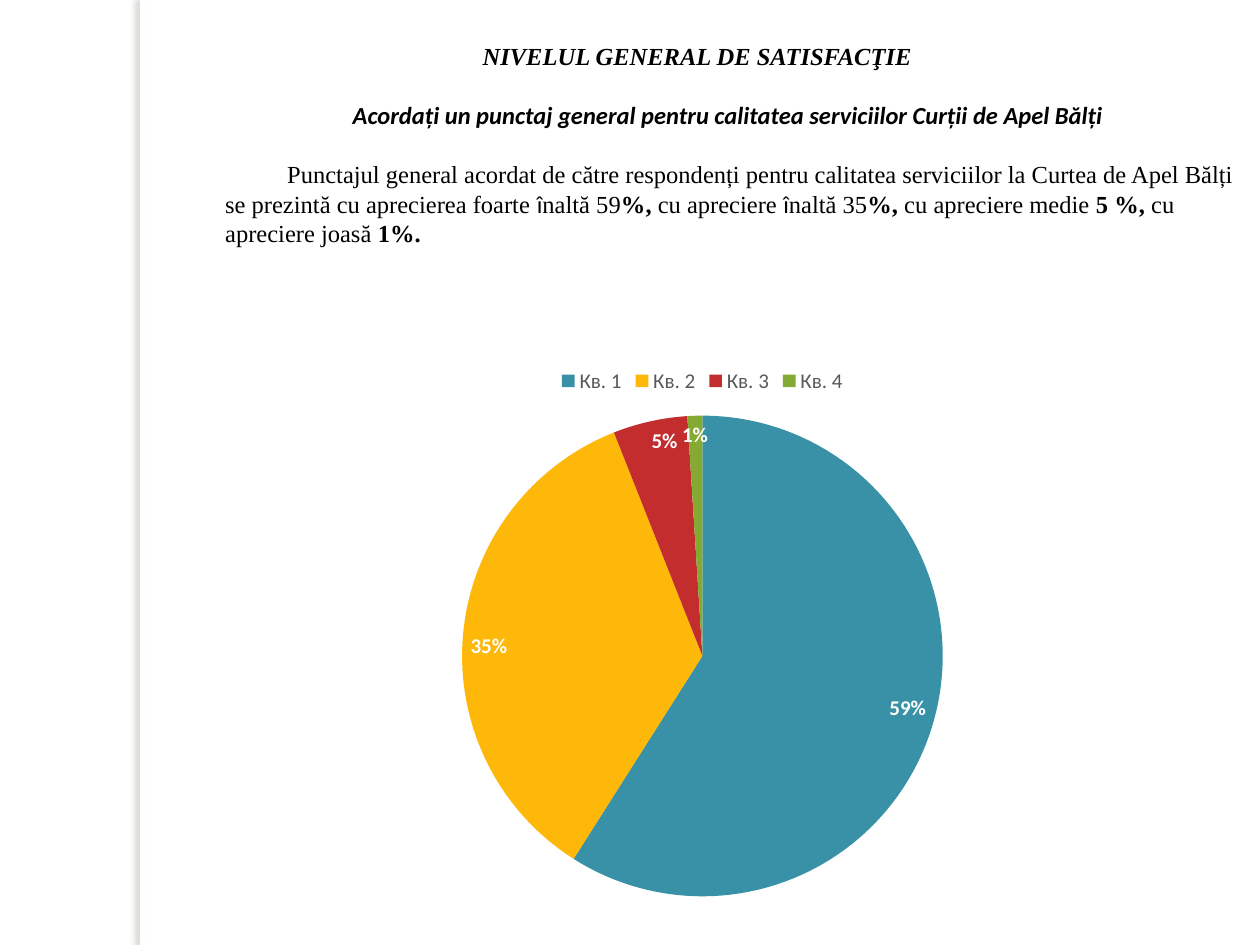
from lxml import etree
from pptx import Presentation
from pptx import util as u
from pptx.chart.data import CategoryChartData
from pptx.dml.color import RGBColor
from pptx.enum import chart as charts, shapes, text
from pptx.oxml.ns import qn

COLOURS = {
    "white": "FFFFFF", "black": "000000", "grey": "595959", "shadow": "736F63",
    "teal": "3891A7", "yellow": "FEB80A", "red": "C32D2E", "green": "84AA33",
}
SERIF, SANS = "Times New Roman", "Calibri"


class SlideBuilder:
    def __init__(self, slide):
        self.slide = slide

    @staticmethod
    def colour(name):
        return RGBColor.from_string(COLOURS[name])

    def style(self, font, face, size, colour="black", bold=False, italic=False):
        font.name, font.size = face, u.Pt(size)
        font.bold, font.italic = bold, italic
        font.color.rgb = self.colour(colour)

    def side_strip(self, left, top, width, height):
        """Add a plain white strip that casts a soft shadow to its left."""
        strip = self.slide.shapes.add_shape(
            shapes.MSO_SHAPE.RECTANGLE, left, top, width, height)
        strip.fill.solid()
        strip.fill.fore_color.rgb = self.colour("white")
        strip.line.fill.background()
        strip.shadow.inherit = False
        effects = strip.element.spPr.find(qn("a:effectLst"))
        shadow = etree.SubElement(
            effects, qn("a:outerShdw"), blurRad=str(u.Pt(3)),
            dist=str(u.Pt(3)), dir="10800000", algn="tl", rotWithShape="0")
        tint = etree.SubElement(shadow, qn("a:srgbClr"), val=COLOURS["shadow"])
        etree.SubElement(tint, qn("a:alpha"), val="25000")

    def text_box(self, left, top, width, height):
        box = self.slide.shapes.add_textbox(left, top, width, height)
        box.text_frame.word_wrap = True
        box.text_frame.vertical_anchor = text.MSO_ANCHOR.TOP
        return box.text_frame

    def paragraph(self, para, spans, indent, size=14, italic=False, gap=0):
        """Fill a paragraph with (words, face, bold) spans."""
        para.space_before = u.Pt(gap)
        para._p.get_or_add_pPr().set("indent", str(indent))
        for words, face, bold in spans:
            span = para.add_run()
            span.text = words
            self.style(span.font, face, size, bold=bold, italic=italic)

    def pie(self, left, top, width, height, slices):
        """Add a pie from (category, value, colour) slices."""
        data = CategoryChartData()
        data.categories = [name for name, _, _ in slices]
        data.add_series("Series 1", [value for _, value, _ in slices])
        chart = self.slide.shapes.add_chart(
            charts.XL_CHART_TYPE.PIE, left, top, width, height, data).chart
        self.style(chart.font, SANS, 10)
        chart.has_title = False
        chart.has_legend = True
        chart.legend.position = charts.XL_LEGEND_POSITION.TOP
        chart.legend.include_in_layout = False
        self.style(chart.legend.font, SANS, 12, "grey")

        plot = chart.plots[0]
        plot.vary_by_categories = True
        for index, (_, _, colour) in enumerate(slices):
            fill = plot.series[0].points[index].format.fill
            fill.solid()
            fill.fore_color.rgb = self.colour(colour)
        plot.has_data_labels = True
        labels = plot.data_labels
        labels.show_percentage, labels.show_value = True, False
        labels.number_format, labels.number_format_is_linked = "0%", False
        labels.position = charts.XL_LABEL_POSITION.INSIDE_END
        self.style(labels.font, SANS, 12, "white", bold=True)


def main():
    deck = Presentation()
    deck.slide_width, deck.slide_height = u.Cm(25.4), u.Cm(19.05)
    page = SlideBuilder(deck.slides.add_slide(deck.slide_layouts[6]))

    page.side_strip(u.Cm(2.82), 0, u.Cm(0.2), deck.slide_height)

    frame = page.text_box(u.Cm(4.29), u.Cm(0.7), u.Cm(20.9), u.Cm(5.15))
    page.paragraph(
        frame.paragraphs[0],
        [("NIVELUL GENERAL DE SATISFACŢIE", SERIF, True)],
        u.Cm(5.19), italic=True)
    page.paragraph(
        frame.add_paragraph(),
        [("Acordați un punctaj general pentru calitatea serviciilor "
          "Curții de Apel Bălți", SANS, True)],
        u.Cm(2.57), italic=True, gap=17)
    page.paragraph(
        frame.add_paragraph(),
        [("Punctajul general acordat de către respondenți pentru calitatea "
          "serviciilor la Curtea de Apel Bălți se prezintă cu aprecierea "
          "foarte ", SERIF, False),
         ("î", SANS, False), ("naltă 59", SERIF, False), ("%,", SERIF, True),
         (" cu apreciere ", SERIF, False),
         ("î", SANS, False), ("naltă 35", SERIF, False), ("%,", SERIF, True),
         (" cu apreciere medie ", SERIF, False), ("5 %,", SERIF, True),
         (" cu apreciere joasă ", SERIF, False), ("1%.", SERIF, True)],
        u.Cm(1.25), gap=17)

    page.pie(
        u.Cm(5.69), u.Cm(7.14), u.Cm(16.94), u.Cm(11.28),
        [("Кв. 1", 59, "teal"), ("Кв. 2", 35, "yellow"),
         ("Кв. 3", 5, "red"), ("Кв. 4", 1, "green")])

    deck.save("out.pptx")


if __name__ == "__main__":
    main()
